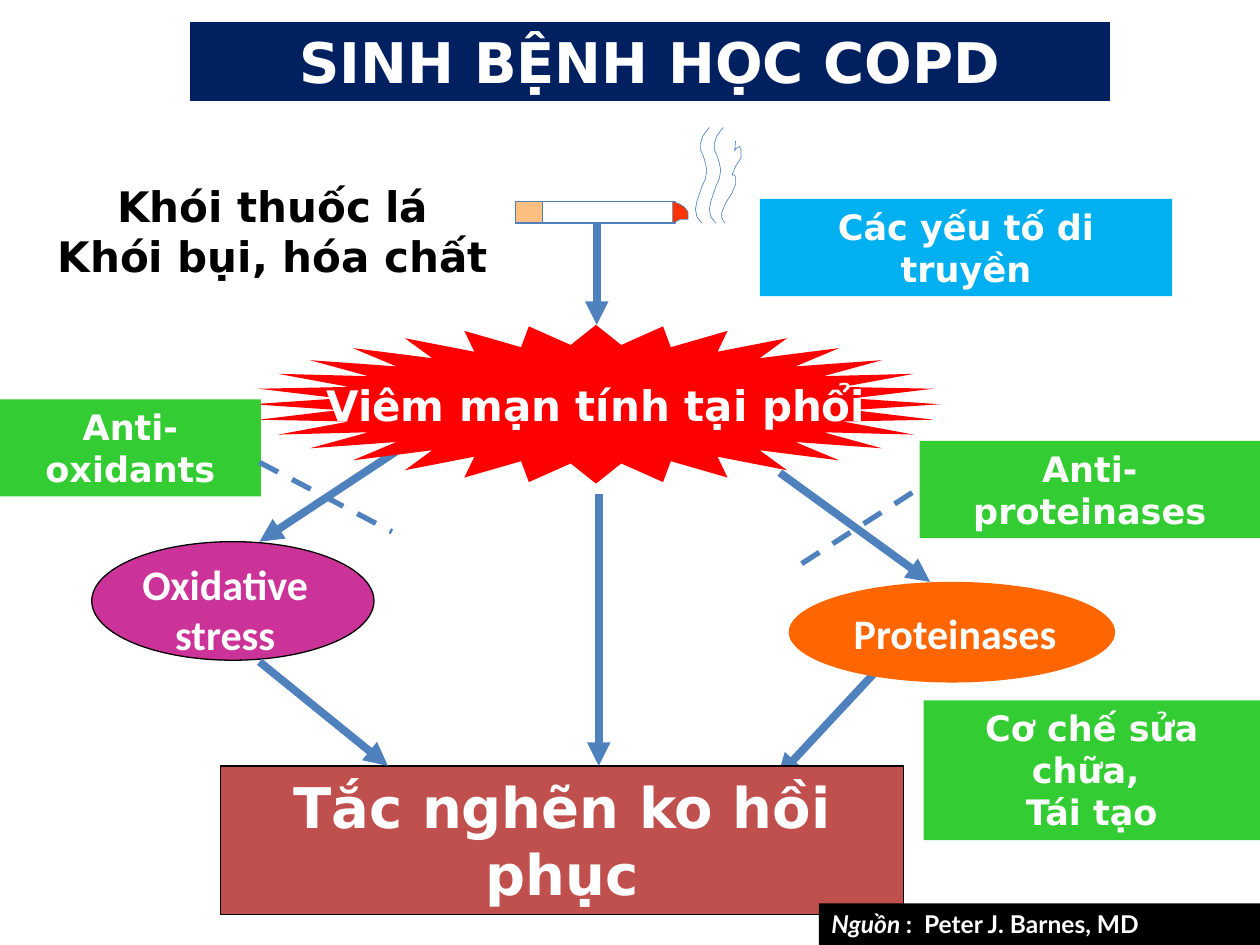
from lxml.etree import SubElement
from pptx import Presentation
from pptx.dml.color import RGBColor
from pptx.enum.dml import MSO_LINE
from pptx.enum.shapes import MSO_CONNECTOR, MSO_SHAPE
from pptx.enum.text import MSO_ANCHOR, MSO_AUTO_SIZE, PP_ALIGN
from pptx.oxml.ns import qn
from pptx.util import Cm, Pt

COLORS = {
    "white": "FFFFFF", "black": "000000", "blue": "4F81BD", "navy": "002060",
    "sky": "00B0F0", "green": "33CC33", "red": "FF0000", "brick": "C0504D",
    "purple": "CC3399", "orange": "FF6600", "filter": "FFBF80", "ember": "FF3300",
}
WAVE = [(1443, 450), (1433, 437), (1430, 422), (1433, 406), (1438, 391),
        (1443, 376), (1450, 361), (1453, 343), (1450, 328), (1445, 312),
        (1440, 302), (1440, 290), (1445, 274), (1458, 257)]
WISP = [(1461, 450), (1455, 439), (1455, 429), (1463, 409), (1476, 389),
        (1483, 371), (1483, 358), (1481, 353), (1476, 353), (1483, 335),
        (1488, 328), (1494, 318), (1494, 302), (1491, 295), (1483, 300),
        (1481, 305), (1483, 284)]
EMBER = [(1356, 406), (1369, 411), (1379, 417), (1387, 427), (1387, 442),
         (1372, 442), (1356, 450)]


class Diagram:
    font = "DejaVu Sans"

    def __init__(self, slide):
        self.slide = slide

    def color(self, name):
        return RGBColor.from_string(COLORS[name])

    def paint(self, s, fill=None, line=None, width=0.75):
        s.shadow.inherit = False
        if fill:
            s.fill.solid()
            s.fill.fore_color.rgb = self.color(fill)
        else:
            s.fill.background()
        if line:
            s.line.color.rgb = self.color(line)
            s.line.width = Pt(width)
        else:
            s.line.fill.background()

    def shape(self, box, fill, line=None, kind=MSO_SHAPE.RECTANGLE, parent=None):
        shapes = (parent or self.slide).shapes
        s = shapes.add_shape(kind, *map(Cm, box))
        self.paint(s, fill, line)
        return s

    def outline(self, points, parent, fill=None):
        fb = parent.shapes.build_freeform(*points[0], scale=Cm(0.01))
        fb.add_line_segments(points[1:], close=bool(fill))
        self.paint(fb.convert_to_shape(), fill, "blue", 0.38)

    def set_text(self, s, text, size, color="white", font=None, wrap=True,
                 grow=True, align=PP_ALIGN.CENTER, anchor=MSO_ANCHOR.TOP):
        tf = s.text_frame
        tf.text = text
        tf.word_wrap = wrap
        tf.auto_size = MSO_AUTO_SIZE.SHAPE_TO_FIT_TEXT if grow else MSO_AUTO_SIZE.NONE
        tf.vertical_anchor = anchor
        for p in tf.paragraphs:
            p.alignment = align
            for r in p.runs:
                self.style(r, size, color, font)

    def style(self, r, size, color="white", font=None):
        r.font.name = font or self.font
        r.font.size = Pt(size)
        r.font.bold = True
        r.font.color.rgb = self.color(color)

    def label(self, box, text, size, fill, line=None, **options):
        self.set_text(self.shape(box, fill, line), text, size, **options)

    def text(self, box, text, size, **options):
        self.set_text(self.slide.shapes.add_textbox(*map(Cm, box)), text, size, **options)

    def line(self, ends, dashed=False):
        c = self.slide.shapes.add_connector(MSO_CONNECTOR.STRAIGHT, *map(Cm, ends))
        c.line.color.rgb = self.color("blue")
        c.line.width = Pt(3 if dashed else 4.5)
        sp_pr = c._element.spPr
        if dashed:
            c.line.dash_style = MSO_LINE.DASH
        else:
            SubElement(sp_pr.find(qn("a:ln")), qn("a:tailEnd"), type="triangle")
        SubElement(sp_pr, qn("a:effectLst"))
        return c

    def cigarette(self):
        group = self.slide.shapes.add_group_shape()
        body = self.shape((10.44, 4.06, 3.18, 0.44), "white", "blue", parent=group)
        self.shape((10.39, 4.06, 0.55, 0.44), "filter", "blue", parent=group)
        self.outline(EMBER, group, "ember")
        self.outline(WAVE, group)
        self.outline(WISP, group)
        self.outline([(x - 28, y) for x, y in WAVE], group)
        return body


def main():
    prs = Presentation()
    prs.slide_width, prs.slide_height = Cm(25.4), Cm(19.05)
    d = Diagram(prs.slides.add_slide(prs.slide_layouts[6]))

    d.line((8.26, 8.92, 5.23, 10.92))
    d.line((17.68, 13.51, 15.67, 15.67))
    d.shape((1.85, 10.92, 5.69, 2.39), "purple", "black", MSO_SHAPE.OVAL)
    d.shape((15.9, 11.73, 6.58, 2.03), "orange", kind=MSO_SHAPE.OVAL)
    body = d.cigarette()

    star = d.shape((5.08, 6.55, 13.87, 3.2), "red", kind=MSO_SHAPE.STAR_32_POINT)
    star.adjustments[0] = 0.375
    d.set_text(star, "Viêm mạn tính tại phổi", 24, wrap=False, grow=False,
               anchor=MSO_ANCHOR.MIDDLE)
    d.line((12.03, 4.5, 12.03, 6.55)).begin_connect(body, 2)

    d.label((4.45, 15.44, 13.77, 3), "Tắc nghẽn ko hồi phục", 32, "brick", "black")
    d.text((2.51, 11.13, 4.06, 2.31), "Oxidative\nstress", 24, font="Calibri", wrap=False)
    d.label((16.92, 12.12, 4.67, 1.3), "Proteinases", 24, "orange",
            font="Calibri", wrap=False)
    for box, text in [
        ((18.62, 14.12, 6.78, 2.82), "Cơ chế sửa chữa, \nTái tạo"),
        ((18.54, 8.89, 6.86, 1.96), "Anti-proteinases"),
        ((0, 8.05, 5.26, 1.96), "Anti-oxidants"),
    ]:
        d.label(box, text, 20, "green")

    for ends in [(12.07, 9.96, 12.07, 15.44), (5.23, 13.34, 7.82, 15.44),
                 (15.72, 9.53, 18.75, 11.73)]:
        d.line(ends)
    d.label((15.32, 4.01, 8.31, 1.96), "Các yếu tố di truyền", 20, "sky")
    d.line((18.39, 9.93, 15.9, 11.53), dashed=True)
    d.line((5.23, 9.32, 7.9, 10.72), dashed=True)
    d.text((0.84, 3.51, 9.32, 2.31), "Khói thuốc lá\nKhói bụi, hóa chất", 24, color="black")

    source = d.shape((16.51, 18.21, 8.89, 0.86), "black")
    d.set_text(source, "Nguồn ", 14, font="Lato", align=PP_ALIGN.LEFT)
    p = source.text_frame.paragraphs[0]
    p.runs[0].font.italic = True
    r = p.add_run()
    r.text = ":  Peter J. Barnes, MD"
    d.style(r, 14, font="Lato")

    d.label((3.81, 0.43, 18.59, 1.63), "SINH BỆNH HỌC COPD", 32, "navy", "white")
    prs.save("out.pptx")


if __name__ == "__main__":
    main()
